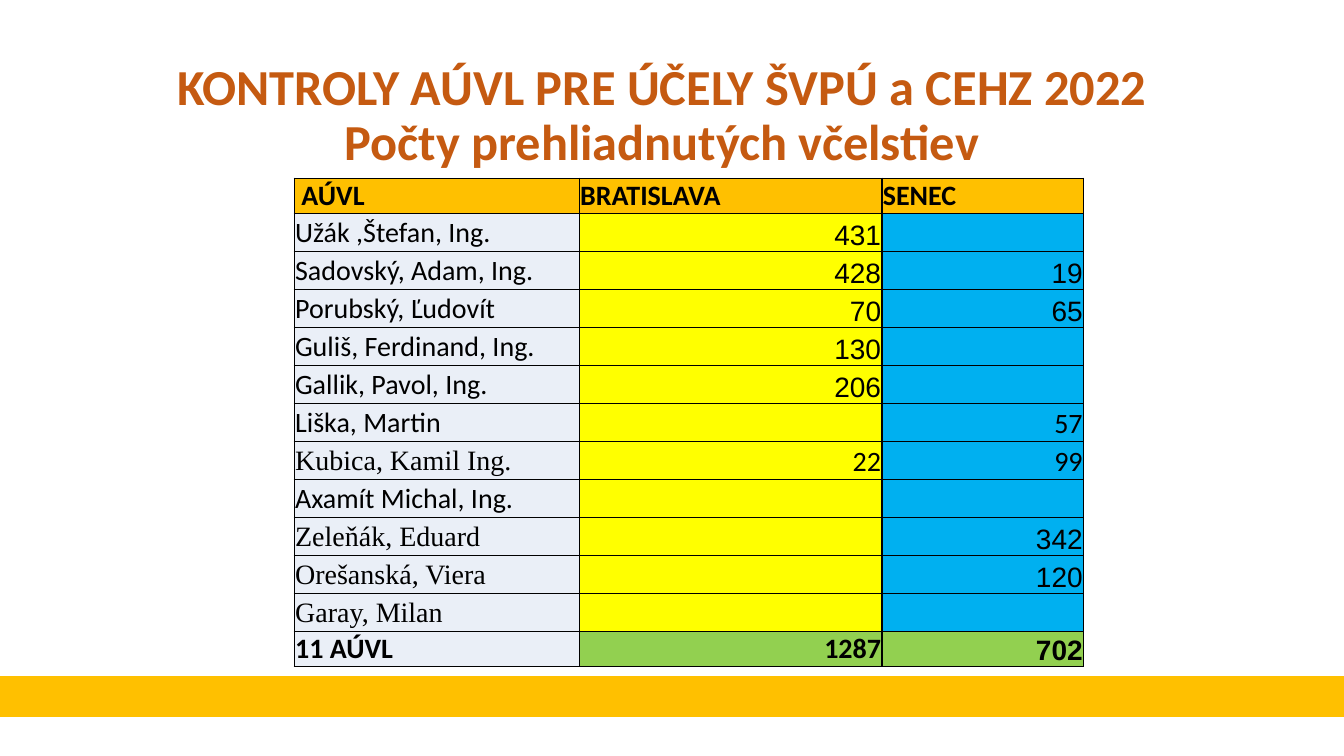
import pptx
import pptx.dml.color
import pptx.enum.shapes
import pptx.enum.text
import pptx.oxml
import pptx.oxml.ns
import pptx.util

Pt = pptx.util.Pt
RGBColor = pptx.dml.color.RGBColor
ALIGN = pptx.enum.text.PP_ALIGN
ANCHOR = pptx.enum.text.MSO_ANCHOR

AMBER = RGBColor(0xFF, 0xC0, 0x00)
RUST = RGBColor(0xC5, 0x5A, 0x11)
BLACK = RGBColor(0x00, 0x00, 0x00)
PALE_BLUE = RGBColor(0xEA, 0xEF, 0xF7)
YELLOW = RGBColor(0xFF, 0xFF, 0x00)
BLUE = RGBColor(0x00, 0xB0, 0xF0)
GREEN = RGBColor(0x92, 0xD0, 0x50)

CALIBRI, ARIAL, TIMES = "Calibri", "Arial", "Times New Roman"

# Each row: the three cell texts, then their fonts
ROWS = [
    (" AÚVL", "BRATISLAVA", "SENEC", CALIBRI, CALIBRI, CALIBRI),
    ("Užák ,Štefan, Ing.", "431", "", CALIBRI, ARIAL, ARIAL),
    ("Sadovský, Adam, Ing.", "428", "19", CALIBRI, ARIAL, ARIAL),
    ("Porubský, Ľudovít", "70", "65", CALIBRI, ARIAL, ARIAL),
    ("Guliš, Ferdinand, Ing.", "130", "", CALIBRI, ARIAL, ARIAL),
    ("Gallik, Pavol, Ing.", "206", "", CALIBRI, ARIAL, ARIAL),
    ("Liška, Martin", "", "57", CALIBRI, ARIAL, CALIBRI),
    ("Kubica, Kamil Ing.", "22", "99", TIMES, CALIBRI, CALIBRI),
    ("Axamít Michal, Ing.", "", "", CALIBRI, ARIAL, ARIAL),
    ("Zeleňák, Eduard", "", "342", TIMES, ARIAL, ARIAL),
    ("Orešanská, Viera", "", "120", TIMES, ARIAL, ARIAL),
    ("Garay, Milan", "", "", TIMES, ARIAL, ARIAL),
    ("11 AÚVL", "1287", "702", CALIBRI, CALIBRI, ARIAL),
]
COLUMN_WIDTHS = (203.6, 216.2, 144)
HEADER_FILLS = (AMBER, AMBER, AMBER)
BODY_FILLS = (PALE_BLUE, YELLOW, BLUE)
TOTAL_FILLS = (PALE_BLUE, GREEN, GREEN)


def add_borders(cell):
    properties = cell._tc.get_or_add_tcPr()
    for side in ("lnL", "lnR", "lnT", "lnB"):
        properties.append(pptx.oxml.parse_xml(
            f'<a:{side} {pptx.oxml.ns.nsdecls("a")} w="{Pt(1)}">'
            f'<a:solidFill><a:srgbClr val="{BLACK}"/></a:solidFill></a:{side}>'))


presentation = pptx.Presentation()
presentation.slide_width = Pt(960)
presentation.slide_height = Pt(540)
slide = presentation.slides.add_slide(presentation.slide_layouts[5])

bar = slide.shapes.add_shape(pptx.enum.shapes.MSO_SHAPE.RECTANGLE,
                             Pt(0), Pt(483), Pt(960), Pt(29))
bar.shadow.inherit = False
bar.fill.solid()
bar.fill.fore_color.rgb = AMBER
bar.line.fill.background()

title = slide.shapes.title
title.left, title.top, title.width, title.height = Pt(88), Pt(38), Pt(770), Pt(88)
title.text_frame.text = "KONTROLY AÚVL PRE ÚČELY ŠVPÚ a CEHZ 2022\vPočty prehliadnutých včelstiev"
title.text_frame.vertical_anchor = ANCHOR.BOTTOM
title.text_frame.auto_size = pptx.enum.text.MSO_AUTO_SIZE.NONE
paragraph = title.text_frame.paragraphs[0]
paragraph.alignment = ALIGN.CENTER
paragraph.line_spacing = 0.9
paragraph.font.name = CALIBRI
paragraph.font.size = Pt(36)
paragraph.font.bold = True
paragraph.font.color.rgb = RUST

last_row = len(ROWS) - 1
table = slide.shapes.add_table(len(ROWS), len(COLUMN_WIDTHS), Pt(210.2), Pt(127.4),
                               Pt(sum(COLUMN_WIDTHS)), Pt(348.6)).table
table.first_row = False
table.horz_banding = False
for column, width in zip(table.columns, COLUMN_WIDTHS):
    column.width = Pt(width)

for row_index, row in enumerate(ROWS):
    is_header, is_total = row_index == 0, row_index == last_row
    table.rows[row_index].height = Pt(25 if is_header or is_total else 27.15)
    fills = HEADER_FILLS if is_header else TOTAL_FILLS if is_total else BODY_FILLS
    for column_index, (text, font_name, fill) in enumerate(zip(row[:3], row[3:], fills)):
        cell = table.cell(row_index, column_index)
        cell.margin_left = cell.margin_right = cell.margin_top = Pt(0.6)
        cell.margin_bottom = Pt(0)
        is_name = column_index == 0 and not (is_header or is_total)
        cell.vertical_anchor = ANCHOR.MIDDLE if is_name else ANCHOR.BOTTOM
        add_borders(cell)
        cell.fill.solid()
        cell.fill.fore_color.rgb = fill
        cell.text = text
        paragraph = cell.text_frame.paragraphs[0]
        paragraph.alignment = ALIGN.LEFT if is_header or column_index == 0 else ALIGN.RIGHT
        paragraph.font.name = font_name
        paragraph.font.size = Pt(20)
        paragraph.font.bold = is_header or is_total
        paragraph.font.color.rgb = BLACK

presentation.save("out.pptx")
